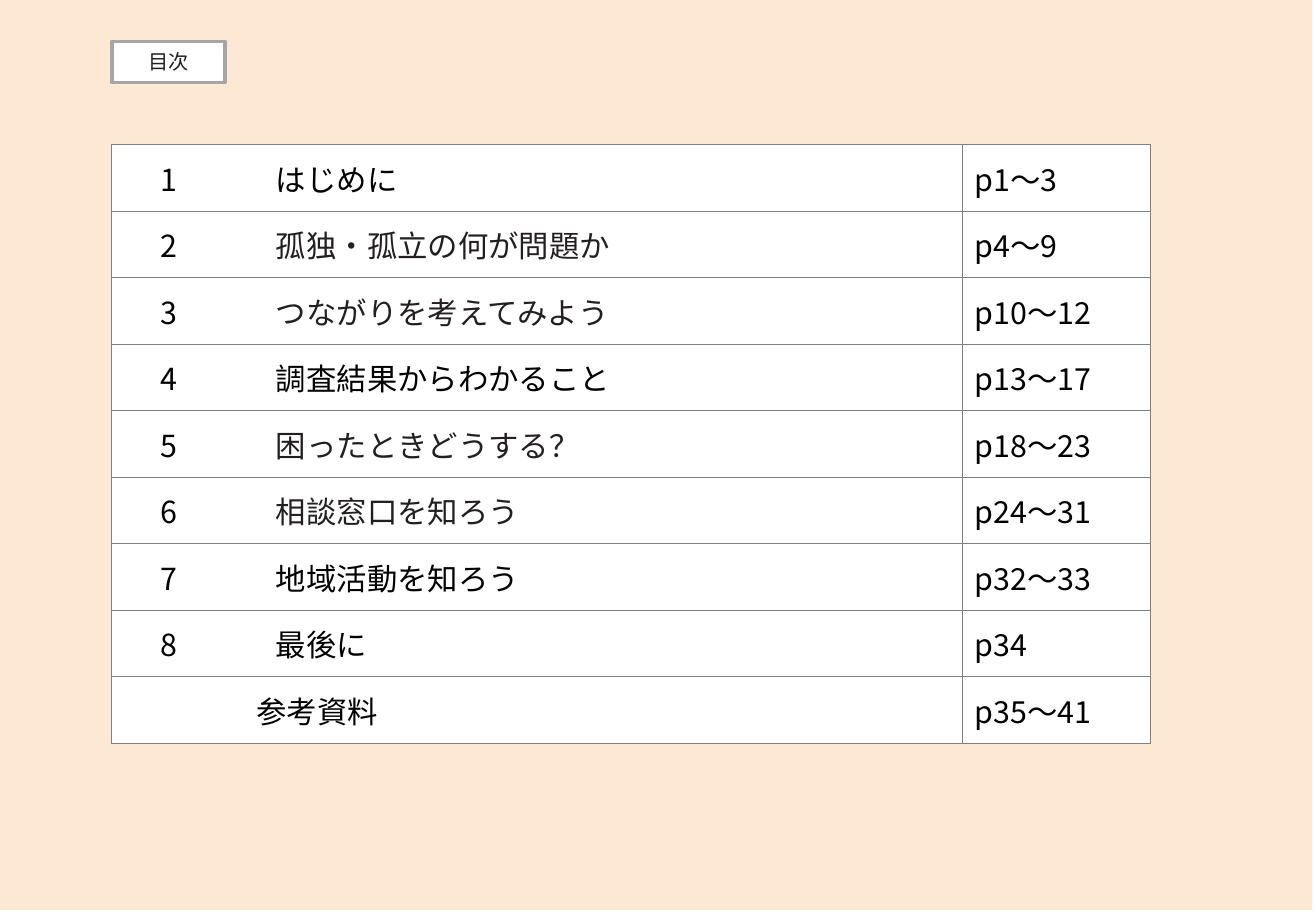
from lxml import etree
from pptx import Presentation
from pptx import util as u
from pptx.dml.color import RGBColor
from pptx.enum import shapes, text
from pptx.oxml import ns

COLORS = {"paper": "FDE9D3", "white": "FFFFFF", "ink": "231F20",
          "black": "000000", "frame": "A6A6A6", "rule": "808080"}
FONT = "Noto Sans CJK JP"
SLIDE_W, SLIDE_H = u.Inches(10.83), u.Inches(7.5)

# Boxes as percentages of the slide: left, top, width, height
PAPER_BOX = (0, 0, 99.72, 99.87)
TITLE_BOX = (8.5, 4.53, 8.59, 4.53)
TABLE_BOX = (8.5, 15.87, 78.95, 65.73)

# Number, chapter, pages, chapter colour
CHAPTERS = [
    ("1", "はじめに", "p1〜3", "black"),
    ("2", "孤独・孤立の何が問題か", "p4〜9", "ink"),
    ("3", "つながりを考えてみよう", "p10〜12", "ink"),
    ("4", "調査結果からわかること", "p13〜17", "black"),
    ("5", "困ったときどうする？", "p18〜23", "ink"),
    ("6", "相談窓口を知ろう", "p24〜31", "ink"),
    ("7", "地域活動を知ろう", "p32〜33", "black"),
    ("8", "最後に", "p34", "black"),
    ("", "参考資料", "p35〜41", "black"),
]
NUMBER_X, CHAPTER_X, APPENDIX_X = u.Inches(0.3), u.Inches(1.25), u.Inches(1.09)


def rgb(name):
    return RGBColor.from_string(COLORS[name])


def place(box):
    left, top, width, height = box
    return {"left": int(SLIDE_W * left / 100), "top": int(SLIDE_H * top / 100),
            "width": int(SLIDE_W * width / 100), "height": int(SLIDE_H * height / 100)}


def apply(obj, values):
    for name, value in values.items():
        setattr(obj, name, value)


def fill(obj, color):
    obj.fill.solid()
    obj.fill.fore_color.rgb = rgb(color)


def add_run(p, words, size, color):
    r = p.add_run()
    r.text = words
    apply(r.font, {"name": FONT, "size": u.Pt(size), "bold": False})
    r.font.color.rgb = rgb(color)
    etree.SubElement(r.font._element, ns.qn("a:ea"), typeface=FONT)


def add_borders(cell):
    tcPr = cell._tc.get_or_add_tcPr()
    for side in ("lnL", "lnR", "lnT", "lnB"):
        ln = etree.SubElement(tcPr, ns.qn(f"a:{side}"), w=str(u.Pt(0.75)))
        solid = etree.SubElement(ln, ns.qn("a:solidFill"))
        etree.SubElement(solid, ns.qn("a:srgbClr"), val=COLORS["rule"])


def add_title(slide, box):
    sp = slide.shapes.title
    apply(sp, place(box))
    fill(sp, "white")
    sp.line.color.rgb = rgb("frame")
    sp.line.width = u.Pt(2)
    tf = sp.text_frame
    apply(tf, {"vertical_anchor": text.MSO_ANCHOR.MIDDLE, "word_wrap": True,
               "auto_size": text.MSO_AUTO_SIZE.NONE})
    p = tf.paragraphs[0]
    p.alignment = text.PP_ALIGN.CENTER
    add_run(p, "目次", 12, "ink")


def add_paper(slide, box):
    sp = slide.shapes.add_shape(shapes.MSO_SHAPE.RECTANGLE, **place(box))
    sp.shadow.inherit = False
    fill(sp, "paper")
    sp.line.fill.background()
    slide.shapes.title.element.addprevious(sp.element)


def add_contents(slide, box):
    area = place(box)
    table = slide.shapes.add_table(len(CHAPTERS), 2, **area).table
    apply(table, {"first_row": False, "horz_banding": False})
    table.columns[1].width = u.Inches(1.55)
    table.columns[0].width = area["width"] - table.columns[1].width
    for i, (number, chapter, pages, color) in enumerate(CHAPTERS):
        for cell in table.rows[i].cells:
            add_borders(cell)
            fill(cell, "white")
            cell.vertical_anchor = text.MSO_ANCHOR.MIDDLE

        # Hanging indent: the tab after the number leads to the chapter
        p = table.cell(i, 0).text_frame.paragraphs[0]
        pPr = p._p.get_or_add_pPr()
        if number:
            pPr.set("marL", str(CHAPTER_X))
            pPr.set("indent", str(NUMBER_X - CHAPTER_X))
            add_run(p, number + "\t", 18, "black")
        else:
            pPr.set("marL", str(APPENDIX_X))
        add_run(p, chapter, 18, color)
        add_run(table.cell(i, 1).text_frame.paragraphs[0], pages, 18, "black")


def main():
    prs = Presentation()
    apply(prs, {"slide_width": SLIDE_W, "slide_height": SLIDE_H})
    slide = prs.slides.add_slide(prs.slide_layouts[5])
    add_paper(slide, PAPER_BOX)
    add_title(slide, TITLE_BOX)
    add_contents(slide, TABLE_BOX)
    prs.save("out.pptx")


if __name__ == "__main__":
    main()
